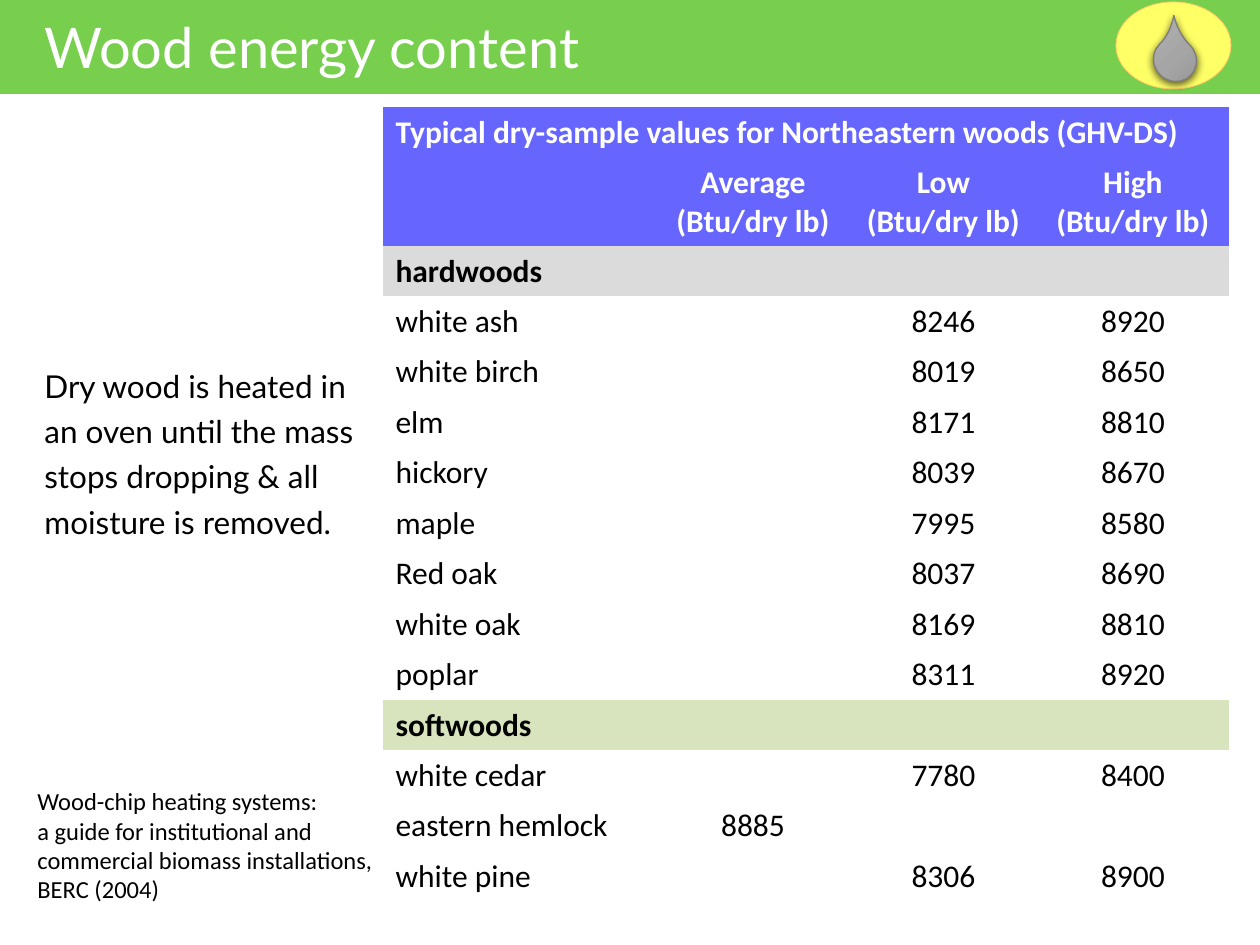
from dataclasses import dataclass

from lxml import etree
from pptx import Presentation, util as u
from pptx.dml.color import RGBColor
from pptx.enum import shapes, text
from pptx.oxml.ns import qn


@dataclass(frozen=True)
class Theme:
    """Colours, fonts and type sizes."""
    green: str = "78CE4D"
    white: str = "FFFFFF"
    black: str = "000000"
    head: str = "6666FF"
    hard: str = "DBDBDB"
    soft: str = "D7E4BD"
    sun: str = "FFFF66"
    rim: str = "FFCC66"
    edge: str = "7C7C7C"
    drop: tuple = ((0, "AFAFAF"), (50, "A5A5A5"), (100, "939393"))
    sans: str = "Lato"
    grid: str = "Calibri"
    title: int = 32
    body: int = 18
    note: int = 14


T = Theme()
PLAIN = "{2D5ABB26-0587-4C30-8999-92F81FD0307C}"
WOODS = [
    ("hardwoods", T.hard, [
        ("white ash", "", "8246", "8920"),
        ("white birch", "", "8019", "8650"),
        ("elm", "", "8171", "8810"),
        ("hickory", "", "8039", "8670"),
        ("maple", "", "7995", "8580"),
        ("Red oak", "", "8037", "8690"),
        ("white oak", "", "8169", "8810"),
        ("poplar", "", "8311", "8920"),
    ]),
    ("softwoods", T.soft, [
        ("white cedar", "", "7780", "8400"),
        ("eastern hemlock", "8885", "", ""),
        ("white pine", "", "8306", "8900"),
    ]),
]


def px(n):
    """Turn pixels into EMU."""
    return u.Emu(round(n * 914400 / 126))


def box(x, y, w, h):
    """Turn a pixel box into EMU lengths."""
    return [px(n) for n in (x, y, w, h)]


def style(frame, font, size, color, bold=False, **form):
    """Format every paragraph of a text frame."""
    face = {"name": font, "size": u.Pt(size), "bold": bold}
    for para in frame.paragraphs:
        for key, val in form.items():
            setattr(para, key, val)
        for key, val in face.items():
            setattr(para.font, key, val)
        para.font.color.rgb = RGBColor.from_string(color)


def write(slide, area, words, font, size, color, wrap=True, **form):
    """Add a text box."""
    frame = slide.shapes.add_textbox(*box(*area)).text_frame
    frame.word_wrap = wrap
    frame.text = words
    style(frame, font, size, color, **form)


def shape(host, kind, area, fill, line=None, width=1):
    """Add a flat preset shape."""
    item = host.shapes.add_shape(kind, *box(*area))
    item.shadow.inherit = False
    item.fill.solid()
    item.fill.fore_color.rgb = RGBColor.from_string(fill)
    if line:
        item.line.color.rgb = RGBColor.from_string(line)
        item.line.width = u.Pt(width)
    else:
        item.line.fill.background()
    return item


def node(host, tag, **attrs):
    """Append one XML element."""
    return etree.SubElement(host, qn(tag), {k: str(v) for k, v in attrs.items()})


def shade(item):
    """Give a shape the grey gradient and a soft shadow."""
    props = item.fill._xPr
    grad = etree.Element(qn("a:gradFill"), rotWithShape="1")
    stops = node(grad, "a:gsLst")
    for pos, tint in T.drop:
        node(node(stops, "a:gs", pos=pos * 1000), "a:srgbClr", val=tint)
    node(grad, "a:lin", ang=5400000, scaled=0)
    props.replace(props.find(qn("a:solidFill")), grad)
    glow = node(props.find(qn("a:effectLst")), "a:outerShdw", blurRad=u.Pt(4.5),
                dist=u.Pt(1.5), dir=5400000, algn="ctr", rotWithShape=0)
    node(node(glow, "a:srgbClr", val=T.black), "a:alpha", val=63000)


def badge(slide, x, y, w, h):
    """Draw the drop on its yellow oval."""
    group = slide.shapes.add_group_shape()
    kind = shapes.MSO_SHAPE
    shape(group, kind.OVAL, (x, y, w, h), T.sun, T.rim, 0.5)
    drop = shape(group, kind.TEAR, (x + 38, y + 36, 42, 44), T.drop[1][1], T.edge, 0.75)
    drop.adjustments[0] = 1.465
    drop.rotation = 314.8
    shade(drop)


def banner(slide, x, y, w, h):
    """Draw the title bar."""
    shape(slide, shapes.MSO_SHAPE.RECTANGLE, (x, y, w, h), T.green)
    write(slide, (x + 32, y + 6, 605, 81), "Wood energy content",
          T.sans, T.title, T.white, wrap=False)
    badge(slide, x + 1116, y + 2, 115, 87)


def aside(slide, x, y, w, h):
    """Place the remark and its source beside the table."""
    write(slide, (x + 7, y, 334, 241),
          "Dry wood is heated in an oven until the mass stops dropping "
          "& all moisture is removed.",
          T.sans, T.body, T.black, line_spacing=1.2)
    write(slide, (x, y + h - 131, w, 131),
          "Wood-chip heating systems:\va guide for institutional and\v"
          "commercial biomass installations,\vBERC (2004)",
          T.grid, T.note, T.black, wrap=False)


def lines():
    """List the table rows as values, fill, colour and weight."""
    unit = "\n(Btu/dry lb)"
    heads = [name + unit for name in ("Average", "Low", "High")]
    title = "Typical dry-sample values for Northeastern woods (GHV-DS)"
    rows = [([title, "", "", ""], T.head, T.white, True),
            (["", *heads], T.head, T.white, True)]
    for name, fill, kinds in WOODS:
        rows.append(([name, "", "", ""], fill, T.black, True))
        rows += [(kind, None, T.black, False) for kind in kinds]
    return rows


def chart(slide, x, y, w, h):
    """Build the table of energy values."""
    rows, cols = lines(), (273, 194, 187, 192)
    table = slide.shapes.add_table(len(rows), len(cols), *box(x, y, w, h)).table
    table._tbl.tblPr.find(qn("a:tableStyleId")).text = PLAIN
    table.first_row = table.horz_banding = False
    for col, wide in zip(table.columns, cols):
        col.width = px(wide)
    tall = 88
    for i, row in enumerate(table.rows):
        row.height = px(tall if i == 1 else (h - tall) / (len(rows) - 1))
    for i, (vals, fill, color, bold) in enumerate(rows):
        for j, val in enumerate(vals):
            cell = table.cell(i, j)
            cell.text = val
            side = text.PP_ALIGN.CENTER if j else text.PP_ALIGN.LEFT
            style(cell.text_frame, T.grid, T.body, color, bold, alignment=side)
            if fill:
                cell.fill.solid()
                cell.fill.fore_color.rgb = RGBColor.from_string(fill)
            else:
                cell.fill.background()
    table.cell(0, 0).merge(table.cell(0, len(cols) - 1))


def main():
    """Build and save the slide."""
    deck = Presentation()
    deck.slide_width, deck.slide_height = px(1260), px(945)
    slide = deck.slides.add_slide(deck.slide_layouts[6])
    banner(slide, 0, 0, 1261, 94)
    chart(slide, 383, 107, 846, 794)
    aside(slide, 25, 353, 364, 558)
    deck.save("out.pptx")


if __name__ == "__main__":
    main()
